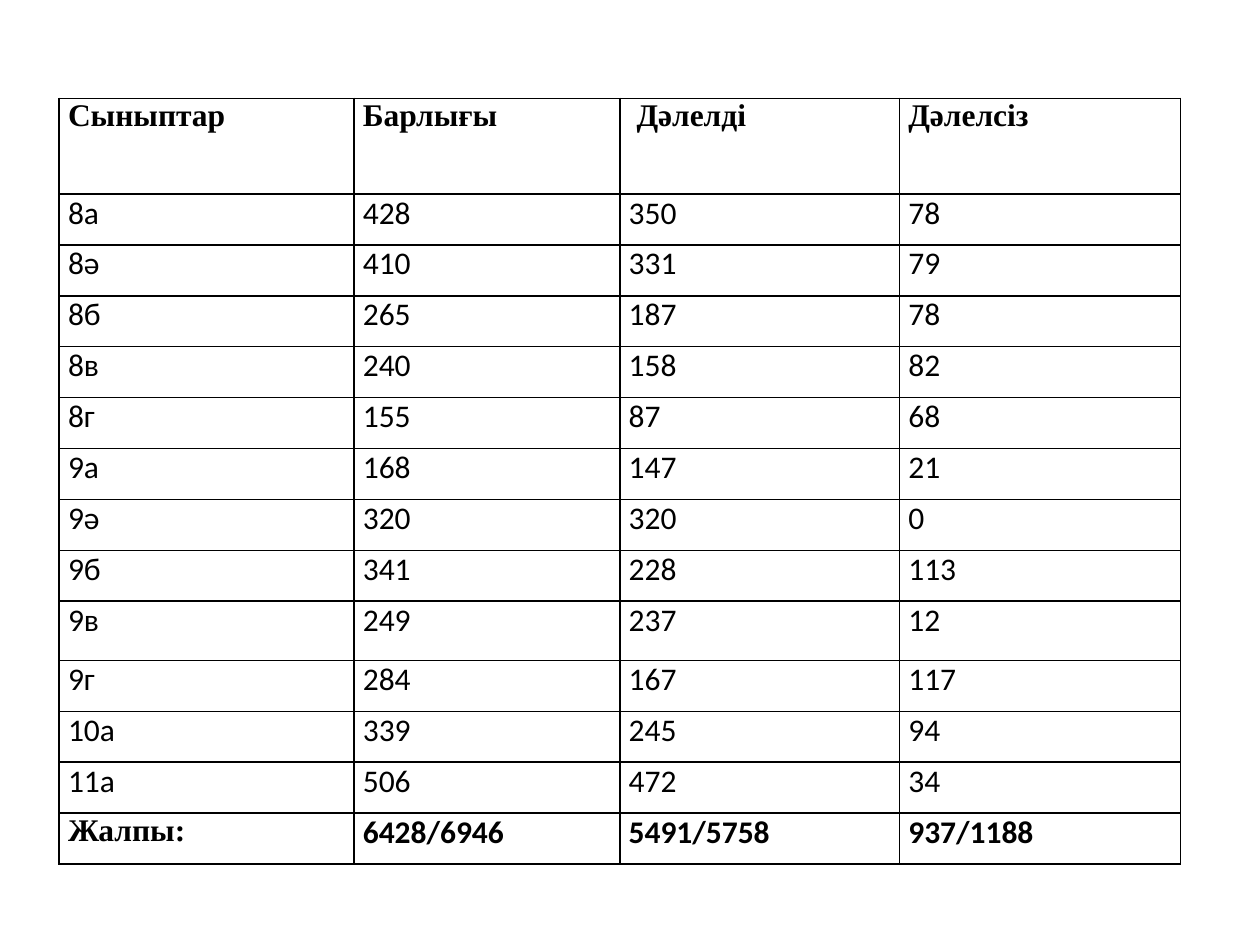
from lxml import etree
from pptx import Presentation
from pptx.dml.color import RGBColor
from pptx.enum.text import PP_ALIGN
from pptx.oxml.ns import qn
from pptx.util import Inches, Pt

JUSTIFY, LEFT = PP_ALIGN.JUSTIFY, PP_ALIGN.LEFT
BLACK = RGBColor(0, 0, 0)
HEADING_FONT, BODY_FONT = "Times New Roman", "Calibri"

HEADER = ("Сыныптар", "Барлығы ", " Дәлелді", "Дәлелсіз")
CLASSES = [
    ("8а", 428, 350, 78),
    ("8ә", 410, 331, 79),
    ("8б", 265, 187, 78),
    ("8в", 240, 158, 82),
    ("8г", 155, 87, 68),
    ("9а", 168, 147, 21),
    ("9ә", 320, 320, 0),
    ("9б", 341, 228, 113),
    ("9в", 249, 237, 12),
    ("9г", 284, 167, 117),
    ("10а", 339, 245, 94),
    ("11а", 506, 472, 34),
]
TOTAL = ("Жалпы:", "6428/6946", "5491/5758", "937/1188")
ROWS = [HEADER, *CLASSES, TOTAL]
LAST = len(ROWS) - 1

TABLE_LEFT, TABLE_TOP, TABLE_HEIGHT = 0.47, 0.78, 6.08
COLUMN_WIDTHS = (2.34, 2.11, 2.22, 2.23)
TALL_ROWS = {0: 0.76, 9: 0.47}
ROW_HEIGHT = (TABLE_HEIGHT - sum(TALL_ROWS.values())) / (len(ROWS) - len(TALL_ROWS))


def add_borders(cell):
    properties = cell._tc.get_or_add_tcPr()
    for position, side in enumerate(("lnL", "lnR", "lnT", "lnB")):
        line = etree.Element(qn(f"a:{side}"), w=str(Pt(1)))
        fill = etree.SubElement(line, qn("a:solidFill"))
        etree.SubElement(fill, qn("a:srgbClr"), val=str(BLACK))
        properties.insert(position, line)


def fill_cell(cell, value, row, column):
    cell.fill.background()
    cell.margin_left = cell.margin_right = Inches(0.07)
    cell.margin_top = cell.margin_bottom = 0
    cell.text = str(value)
    para = cell.text_frame.paragraphs[0]
    para.alignment = JUSTIFY if row == 0 else LEFT
    is_heading = row == 0 or (row == LAST and column == 0)
    para.font.name = HEADING_FONT if is_heading else BODY_FONT
    para.font.size = Pt(18)
    para.font.bold = row in (0, LAST)
    para.font.color.rgb = BLACK
    add_borders(cell)


deck = Presentation()
deck.slide_width, deck.slide_height = Inches(10), Inches(7.5)
page = deck.slides.add_slide(deck.slide_layouts[6])
table = page.shapes.add_table(
    len(ROWS), len(HEADER), Inches(TABLE_LEFT), Inches(TABLE_TOP),
    Inches(sum(COLUMN_WIDTHS)), Inches(TABLE_HEIGHT),
).table
table.first_row = table.horz_banding = False

for column, width in zip(table.columns, COLUMN_WIDTHS):
    column.width = Inches(width)
for row, values in enumerate(ROWS):
    table.rows[row].height = Inches(TALL_ROWS.get(row, ROW_HEIGHT))
    for column, value in enumerate(values):
        fill_cell(table.cell(row, column), value, row, column)

deck.save("out.pptx")
